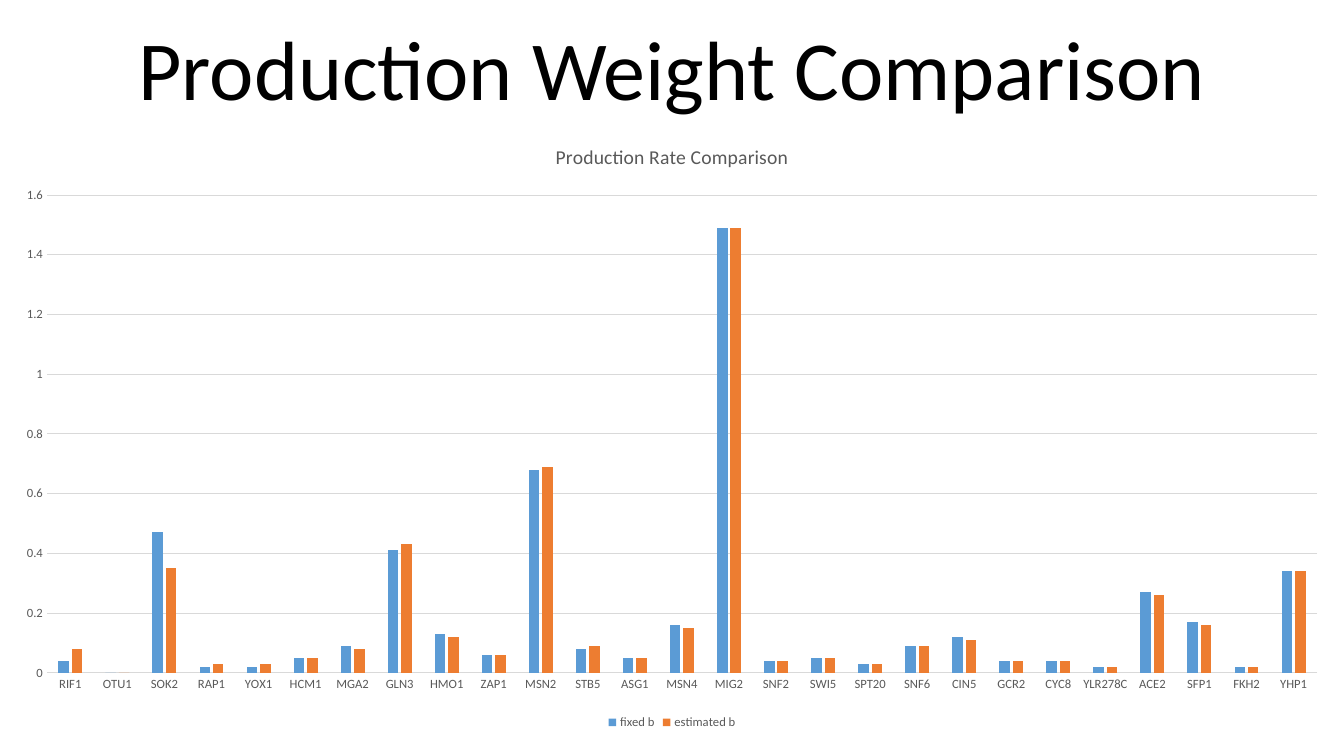
from pptx import Presentation
from pptx.chart.data import CategoryChartData
from pptx.dml.color import RGBColor
from pptx.enum.chart import XL_CHART_TYPE, XL_LEGEND_POSITION, XL_TICK_MARK
from pptx.enum.text import MSO_ANCHOR, PP_ALIGN
from pptx.util import Inches, Pt

COLUMN = XL_CHART_TYPE.COLUMN_CLUSTERED
BOTTOM = XL_LEGEND_POSITION.BOTTOM
NO_TICK = XL_TICK_MARK.NONE
MIDDLE = MSO_ANCHOR.MIDDLE
CENTER = PP_ALIGN.CENTER

FONT = "Calibri"
COLORS = {"title": "000000", "label": "595959", "grid": "D9D9D9",
          "fixed b": "5B9BD5", "estimated b": "ED7D31"}

# gene, fixed b, estimated b
RATES = [
    ("RIF1", 0.04, 0.08), ("OTU1", 0, 0), ("SOK2", 0.47, 0.35),
    ("RAP1", 0.02, 0.03), ("YOX1", 0.02, 0.03), ("HCM1", 0.05, 0.05),
    ("MGA2", 0.09, 0.08), ("GLN3", 0.41, 0.43), ("HMO1", 0.13, 0.12),
    ("ZAP1", 0.06, 0.06), ("MSN2", 0.68, 0.69), ("STB5", 0.08, 0.09),
    ("ASG1", 0.05, 0.05), ("MSN4", 0.16, 0.15), ("MIG2", 1.49, 1.49),
    ("SNF2", 0.04, 0.04), ("SWI5", 0.05, 0.05), ("SPT20", 0.03, 0.03),
    ("SNF6", 0.09, 0.09), ("CIN5", 0.12, 0.11), ("GCR2", 0.04, 0.04),
    ("CYC8", 0.04, 0.04), ("YLR278C", 0.02, 0.02), ("ACE2", 0.27, 0.26),
    ("SFP1", 0.17, 0.16), ("FKH2", 0.02, 0.02), ("YHP1", 0.34, 0.34),
]


def rgb(name):
    return RGBColor.from_string(COLORS[name])


def style(font, size, color):
    font.name, font.size, font.bold = FONT, Pt(size), False
    font.color.rgb = rgb(color)


def rule(line):
    line.color.rgb = rgb("grid")
    line.width = Pt(0.75)


def add_title(slide, box, text):
    frame = slide.shapes.add_textbox(*box).text_frame
    frame.word_wrap = True
    frame.vertical_anchor = MIDDLE
    para = frame.paragraphs[0]
    para.text = text
    para.alignment = CENTER
    para.line_spacing = 0.9
    style(para.font, 60, "title")


def add_rates(slide, box, title):
    genes, fixed, guess = zip(*RATES)
    data = CategoryChartData(number_format="General")
    data.categories = genes
    data.add_series("fixed b", fixed)
    data.add_series("estimated b", guess)
    chart = slide.shapes.add_chart(COLUMN, *box, data).chart
    style(chart.font, 10, "title")

    chart.has_title = True
    head = chart.chart_title
    head.include_in_layout = False
    para = head.text_frame.paragraphs[0]
    para.text = title
    style(para.font, 14, "label")

    chart.has_legend = True
    chart.legend.position = BOTTOM
    chart.legend.include_in_layout = False
    style(chart.legend.font, 9, "label")

    for axis in (chart.category_axis, chart.value_axis):
        axis.major_tick_mark = axis.minor_tick_mark = NO_TICK
        style(axis.tick_labels.font, 9, "label")
    rule(chart.category_axis.format.line)
    value = chart.value_axis
    value.format.line.fill.background()
    value.minimum_scale, value.maximum_scale, value.major_unit = 0, 1.6, 0.2
    rule(value.major_gridlines.format.line)

    plot = chart.plots[0]
    plot.gap_width, plot.overlap = 219, -27
    plot.vary_by_categories = False
    for series in plot.series:
        series.invert_if_negative = False
        series.format.fill.solid()
        series.format.fill.fore_color.rgb = rgb(series.name)


def main():
    deck = Presentation()
    deck.slide_width, deck.slide_height = Inches(13.33), Inches(7.5)
    wide = deck.slide_width
    slide = deck.slides.add_slide(deck.slide_layouts[6])
    margin = Inches(0.92)
    add_title(slide, (margin, 0, wide - 2 * margin, Inches(1.45)),
              "Production Weight Comparison")
    add_rates(slide, (0, Inches(1.21), wide, Inches(6.07)),
              "Production Rate Comparison")
    deck.save("out.pptx")


if __name__ == "__main__":
    main()
